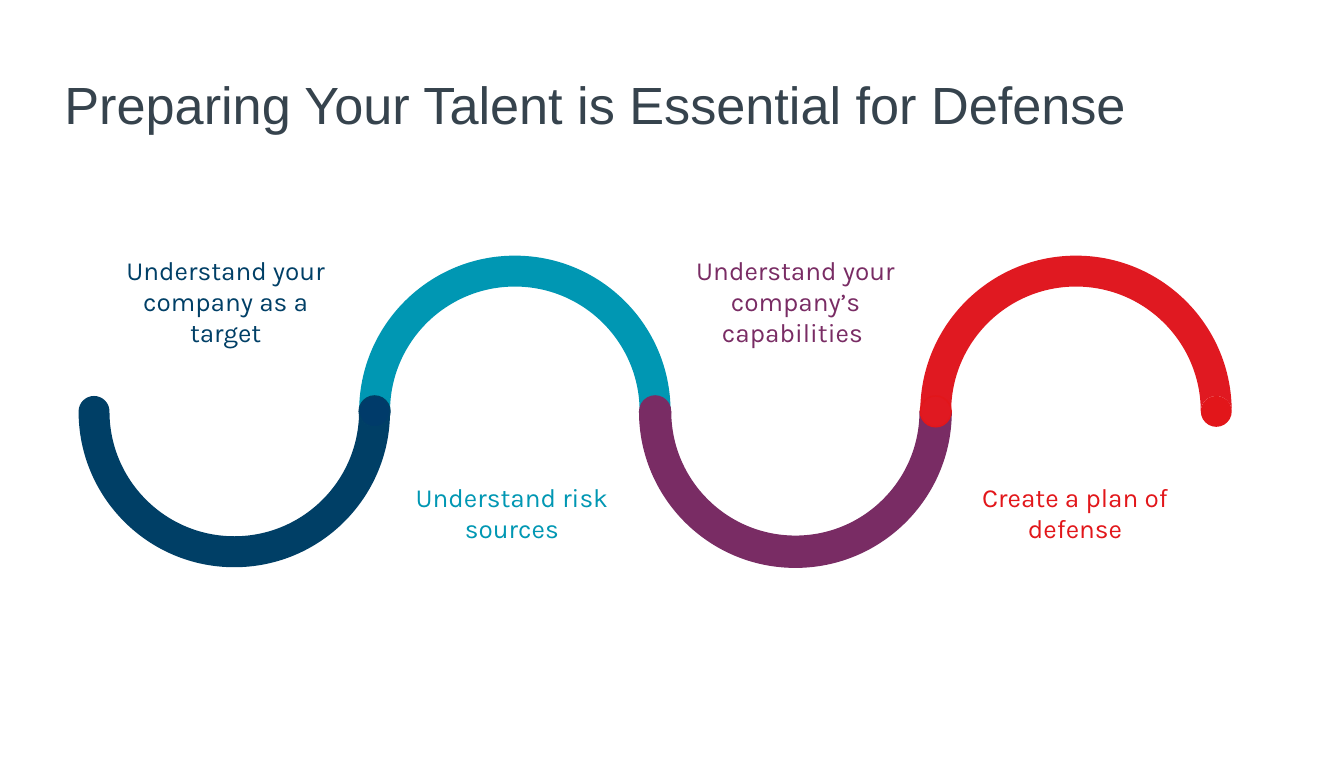
from math import cos, radians, sin

from lxml import etree
from pptx import Presentation
from pptx.dml.color import RGBColor
from pptx.enum.shapes import MSO_SHAPE
from pptx.enum.text import MSO_ANCHOR as ANCHOR, PP_ALIGN as ALIGN
from pptx.oxml.ns import qn
from pptx.util import Inches, Pt

COLORS = {
    "title": "36434D",
    "navy": "003F66",
    "navy_cap": "003B6A",
    "teal": "0097B3",
    "purple": "792C64",
    "red": "E01921",
    "bright_red": "E2161A",
}

prs = Presentation()
prs.slide_width, prs.slide_height = Inches(10), Inches(5.63)
slide = prs.slides.add_slide(prs.slide_layouts[6])


def add_text(text, left, top, width, height, *, size, font, color,
             align=ALIGN.LEFT, anchor=ANCHOR.TOP, inset=0.1):
    frame = slide.shapes.add_textbox(
        Inches(left), Inches(top), Inches(width), Inches(height)).text_frame
    frame.word_wrap = True
    frame.vertical_anchor = anchor
    frame.margin_left = Inches(inset)
    paragraph = frame.paragraphs[0]
    paragraph.alignment = align
    run = paragraph.add_run()
    run.text = text
    run.font.size = Pt(size)
    run.font.name = font
    run.font.color.rgb = RGBColor.from_string(COLORS[color])


def arc_points(center_x, radius, start, end):
    """Bezier points of an arc, three per quarter; degrees run clockwise from the right."""
    turn = 1 if end > start else -1
    points = []
    for angle in range(start, end, 90 * turn):
        a, b = radians(angle), radians(angle + 90 * turn)
        handle = 0.5523 * turn
        points += [(cos(a) - handle * sin(a), sin(a) + handle * cos(a)),
                   (cos(b) + handle * sin(b), sin(b) - handle * cos(b)),
                   (cos(b), sin(b))]
    return [(Inches(center_x + radius * x), Inches(AXIS_Y + radius * y))
            for x, y in points]


add_text("Preparing Your Talent is Essential for Defense", 0.48, 0.37, 9.13, 0.8,
         size=28, font="Arial", color="title", anchor=ANCHOR.MIDDLE, inset=0)

# The wave: four half rings that swing below and above one axis
AXIS_Y = 3.06
WAVE_LEFT, WAVE_RIGHT = 0.7, 9.05
BAND = 0.23
PITCH = (WAVE_RIGHT - WAVE_LEFT) / 4
OUTER, INNER = (PITCH + BAND) / 2, (PITCH - BAND) / 2

# arc colour, arc line, cap colour, cap line
stages = [
    ("navy", None, "navy_cap", "navy"),
    ("teal", None, "purple", "purple"),
    ("purple", "purple", "red", "bright_red"),
    ("red", None, "bright_red", None),
]

parts = []
for i, (color, line, _, _) in enumerate(stages):
    left_end, right_end = WAVE_LEFT + PITCH * i, WAVE_LEFT + PITCH * (i + 1)
    center_x = (left_end + right_end) / 2
    sweep = 180 if i % 2 == 0 else -180
    # The first end is rounded outwards, the others are hollow to meet a cap
    left_turn = (180, 360) if i == 0 else (sweep, 0)
    outline = (arc_points(center_x, OUTER, 0, sweep)
               + arc_points(left_end, BAND / 2, *left_turn)
               + arc_points(center_x, INNER, sweep, 0)
               + arc_points(right_end, BAND / 2, sweep, 0))
    builder = slide.shapes.build_freeform(*outline[-1])
    builder.add_line_segments(outline, close=True)
    ring = builder.convert_to_shape()
    # Turn each three straight segments into one curve
    segments = list(ring._element.iter(qn("a:lnTo")))
    for first in range(0, len(outline), 3):
        curve = etree.Element(qn("a:cubicBezTo"))
        segments[first].addprevious(curve)
        for segment in segments[first:first + 3]:
            curve.append(segment[0])
    for segment in segments:
        segment.getparent().remove(segment)
    parts.append((ring, color, line))

for i, (_, _, color, line) in enumerate(stages, start=1):
    cap = slide.shapes.add_shape(
        MSO_SHAPE.OVAL, Inches(WAVE_LEFT + PITCH * i - BAND / 2),
        Inches(AXIS_Y - BAND / 2), Inches(BAND), Inches(BAND))
    parts.append((cap, color, line))

for part, color, line in parts:
    part.shadow.inherit = False
    part.fill.solid()
    part.fill.fore_color.rgb = RGBColor.from_string(COLORS[color])
    if line:
        part.line.color.rgb = RGBColor.from_string(COLORS[line])
        part.line.width = Pt(0.75)
    else:
        part.line.fill.background()

captions = [
    ("Understand your company as a target", 0.73, 1.84, 0.81, "navy"),
    ("Understand your company’s capabilities ", 4.97, 1.84, 0.81, "purple"),
    ("Understand risk sources", 2.86, 3.53, 0.57, "teal"),
    ("Create a plan of defense", 7.05, 3.53, 0.57, "bright_red"),
]
for caption, left, top, height, color in captions:
    add_text(caption, left, top, 1.9, height,
             size=14, font="Karla", color=color, align=ALIGN.CENTER)

prs.save("out.pptx")
